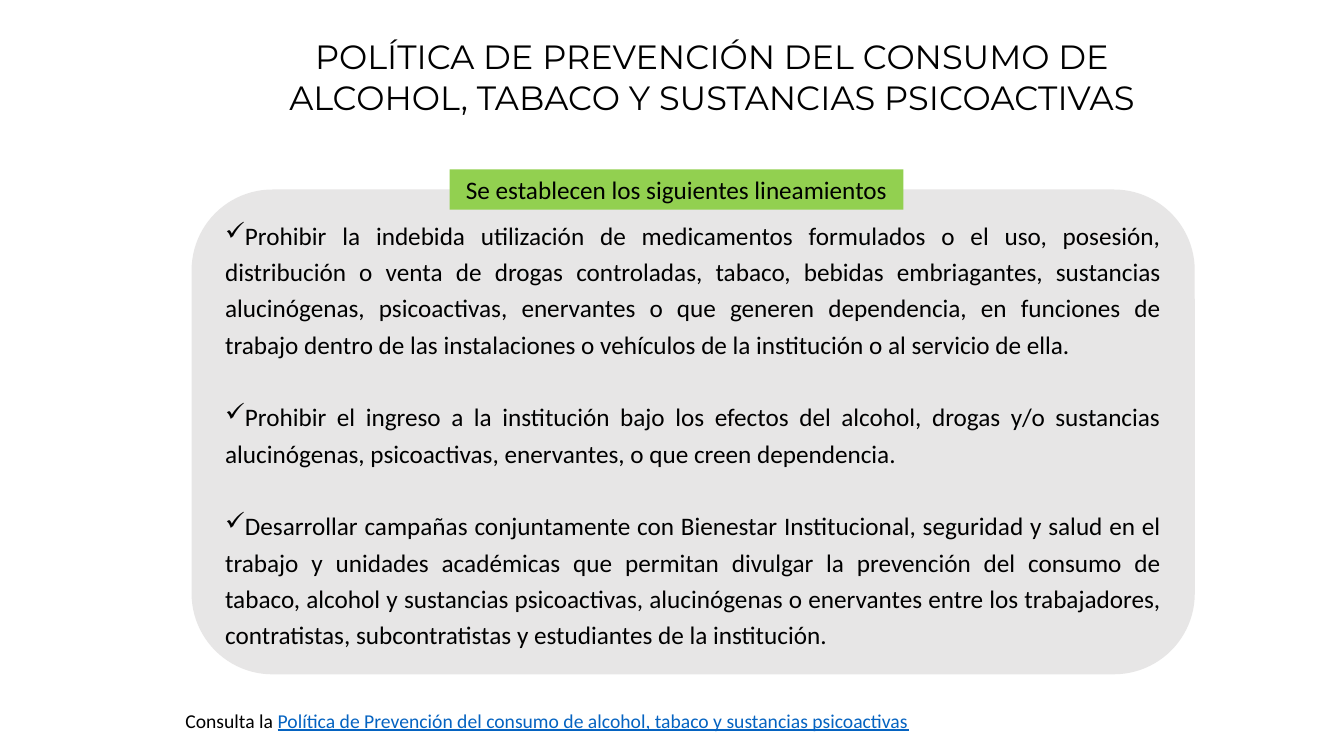
import pptx
import pptx.util
import pptx.dml.color
import pptx.enum.shapes
import pptx.enum.text
import lxml.etree

Inches, Pt = pptx.util.Inches, pptx.util.Pt
RGB = pptx.dml.color.RGBColor
ALIGN = pptx.enum.text.PP_ALIGN
ANCHOR = pptx.enum.text.MSO_ANCHOR
SHAPE = pptx.enum.shapes.MSO_SHAPE

TITLE = "POLÍTICA DE PREVENCIÓN DEL CONSUMO DE ALCOHOL, TABACO Y SUSTANCIAS PSICOACTIVAS"
LABEL = "Se establecen los siguientes lineamientos"
RULES = [
    "Prohibir la indebida utilización de medicamentos formulados o el uso, posesión, "
    "distribución o venta de drogas controladas, tabaco, bebidas embriagantes, sustancias "
    "alucinógenas, psicoactivas, enervantes o que generen dependencia, en funciones de "
    "trabajo dentro de las instalaciones o vehículos de la institución o al servicio de ella.",
    "Prohibir el ingreso a la institución bajo los efectos del alcohol, drogas y/o sustancias "
    "alucinógenas, psicoactivas, enervantes, o que creen dependencia.",
    "Desarrollar campañas conjuntamente con Bienestar Institucional, seguridad y salud en el "
    "trabajo y unidades académicas que permitan divulgar la prevención del consumo de "
    "tabaco, alcohol y sustancias psicoactivas, alucinógenas o enervantes entre los "
    "trabajadores, contratistas, subcontratistas y estudiantes de la institución.",
]
LEAD = "Consulta la "
LINK = "Política de Prevención del consumo de alcohol, tabaco y sustancias psicoactivas"

BLACK = RGB(0x00, 0x00, 0x00)
GRAY = RGB(0xE7, 0xE6, 0xE6)
GREEN = RGB(0x92, 0xD0, 0x50)
BLUE = RGB(0x05, 0x63, 0xC1)

WIDE, HIGH = 13.33, 7.5
HEAD = (2.45, 0.31, 9.22, 1.31)
PANEL = (1.9, 1.88, 9.95, 4.81)
TAG_WIDE, TAG_HIGH = 4.5, 0.4
TAG = (4.46, PANEL[1] - TAG_HIGH / 2, TAG_WIDE, TAG_HIGH)
FOOT = (1.74, 6.98, 7.49, 0.34)


def place(box):
    return [Inches(n) for n in box]


def style(para, size, face="Calibri"):
    para.font.size = Pt(size)
    para.font.name = face
    para.font.color.rgb = BLACK


def add_block(slide, kind, box, fill):
    block = slide.shapes.add_shape(kind, *place(box))
    block.shadow.inherit = False
    block.fill.solid()
    block.fill.fore_color.rgb = fill
    block.line.fill.background()
    block.text_frame.vertical_anchor = ANCHOR.MIDDLE
    return block.text_frame


def add_check(para):
    props = para._p.get_or_add_pPr()
    props.set("marL", "0")
    props.set("indent", "0")
    space = "{http://schemas.openxmlformats.org/drawingml/2006/main}"
    color = lxml.etree.SubElement(props, space + "buClr")
    lxml.etree.SubElement(color, space + "srgbClr", val=str(BLACK))
    lxml.etree.SubElement(props, space + "buChar", char="✓")


def main():
    deck = pptx.Presentation()
    deck.slide_width, deck.slide_height = Inches(WIDE), Inches(HIGH)
    slide = deck.slides.add_slide(deck.slide_layouts[5])

    title = slide.shapes.title
    title.left, title.top, title.width, title.height = place(HEAD)
    frame = title.text_frame
    frame.text = TITLE
    frame.word_wrap = True
    frame.auto_size = pptx.enum.text.MSO_AUTO_SIZE.NONE
    frame.vertical_anchor = ANCHOR.TOP
    frame.paragraphs[0].alignment = ALIGN.CENTER
    style(frame.paragraphs[0], 24, "Montserrat")

    frame = add_block(slide, SHAPE.ROUNDED_RECTANGLE, PANEL, GRAY)
    frame.word_wrap = True
    for i, rule in enumerate(RULES):
        para = frame.add_paragraph() if i else frame.paragraphs[0]
        para.text = rule
        para.alignment = ALIGN.JUSTIFY
        para.line_spacing = 1.2
        para.space_before = Pt(26 if i else 0)
        add_check(para)
        style(para, 18)

    frame = add_block(slide, SHAPE.RECTANGLE, TAG, GREEN)
    frame.word_wrap = False
    frame.text = LABEL
    frame.paragraphs[0].alignment = ALIGN.CENTER
    style(frame.paragraphs[0], 18)

    frame = slide.shapes.add_textbox(*place(FOOT)).text_frame
    frame.word_wrap = True
    para = frame.paragraphs[0]
    style(para, 14)
    para.add_run().text = LEAD
    link = para.add_run()
    link.text = LINK
    link.font.color.rgb = BLUE
    link.font.underline = True

    deck.save("out.pptx")


if __name__ == "__main__":
    main()
